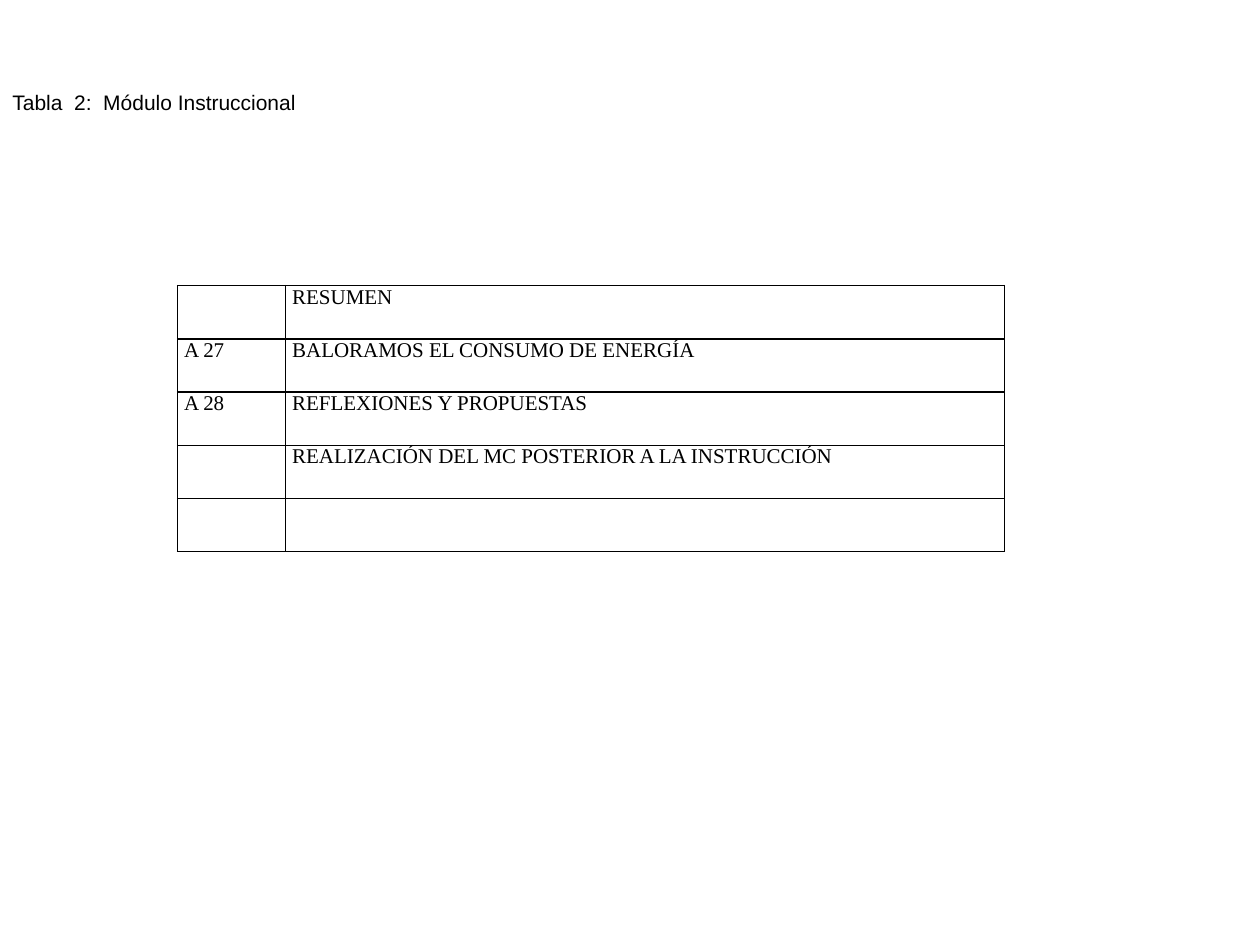
from dataclasses import dataclass

from lxml.etree import fromstring
from pptx import Presentation
from pptx.dml.color import RGBColor
from pptx.enum.text import MSO_ANCHOR, MSO_AUTO_SIZE, PP_ALIGN
from pptx.oxml.ns import nsdecls
from pptx.util import Cm, Pt


@dataclass(frozen=True)
class Theme:
    ink: str = "000000"
    paper: str = "FFFFFF"
    title_font: str = "Arial"
    table_font: str = "Times New Roman"
    size: int = 12
    border: int = 1


THEME = Theme()
ROWS = [
    ("", "RESUMEN"),
    ("A 27", "BALORAMOS EL CONSUMO DE ENERGÍA"),
    ("A 28", "REFLEXIONES Y PROPUESTAS"),
    ("", "REALIZACIÓN DEL MC POSTERIOR A LA INSTRUCCIÓN"),
    ("", ""),
]


def style_paragraph(p, font_name, alignment):
    p.alignment = alignment
    p.font.name = font_name
    p.font.size = Pt(THEME.size)
    p.font.color.rgb = RGBColor.from_string(THEME.ink)


def add_borders(cell):
    tcPr = cell._tc.get_or_add_tcPr()
    for i, side in enumerate(("lnL", "lnR", "lnT", "lnB")):
        tcPr.insert(i, fromstring(
            f'<a:{side} {nsdecls("a")} w="{Pt(THEME.border)}"><a:solidFill>'
            f'<a:srgbClr val="{THEME.ink}"/></a:solidFill></a:{side}>'))


def place_title(s, text, left, top, width, height):
    sp = s.shapes.title
    sp.left, sp.top, sp.width, sp.height = left, top, width, height
    tf = sp.text_frame
    tf.text = text
    tf.word_wrap = True
    tf.auto_size = MSO_AUTO_SIZE.NONE
    tf.vertical_anchor = MSO_ANCHOR.TOP
    tf.margin_left = tf.margin_right = Cm(0.25)
    tf.margin_top = tf.margin_bottom = Cm(0.03)
    style_paragraph(tf.paragraphs[0], THEME.title_font, PP_ALIGN.LEFT)


def place_table(s, rows, left, top, width, height, code_width):
    table = s.shapes.add_table(len(rows), 2, left, top, width, height).table
    table.first_row = table.horz_banding = False
    table.columns[0].width = code_width
    table.columns[1].width = width - code_width
    for r, texts in enumerate(rows):
        for c, text in enumerate(texts):
            cell = table.cell(r, c)
            cell.text = text
            cell.margin_left = cell.margin_right = Cm(0.13)
            cell.margin_top = cell.margin_bottom = 0
            cell.fill.solid()
            cell.fill.fore_color.rgb = RGBColor.from_string(THEME.paper)
            add_borders(cell)
            style_paragraph(cell.text_frame.paragraphs[0],
                            THEME.table_font, PP_ALIGN.JUSTIFY)


def main():
    prs = Presentation()
    prs.slide_width, prs.slide_height = Cm(25.4), Cm(19.05)
    s = prs.slides.add_slide(prs.slide_layouts[5])
    place_table(s, ROWS, Cm(3.58), Cm(5.76), Cm(16.67), Cm(5.36), Cm(2.18))
    place_title(s, "Tabla  2:  Módulo Instruccional",
                0, Cm(1.78), prs.slide_width, Cm(1.27))
    prs.save("out.pptx")


if __name__ == "__main__":
    main()
